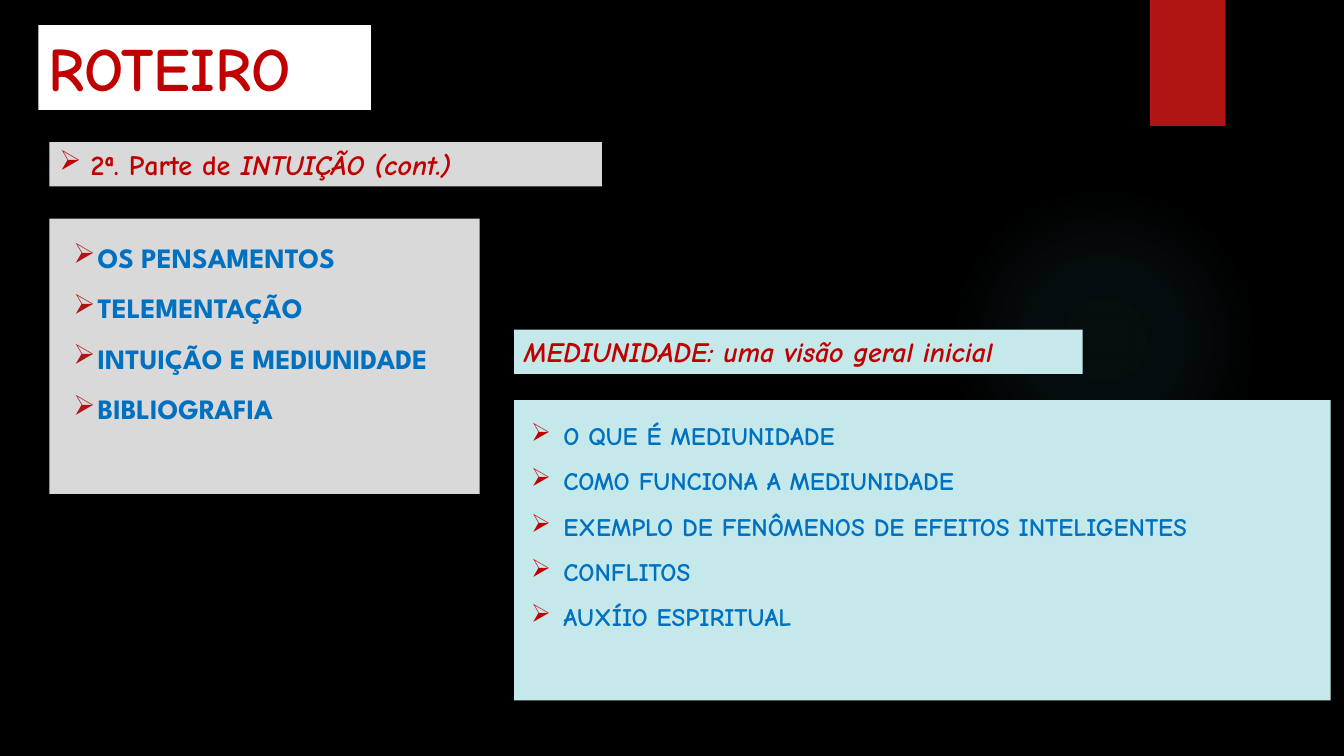
from lxml import etree
from pptx import Presentation
from pptx.dml.color import RGBColor
from pptx.enum.shapes import MSO_SHAPE
from pptx.enum.text import MSO_ANCHOR, PP_ALIGN
from pptx.oxml.ns import qn
from pptx.util import Inches, Pt

RECT, OVAL = MSO_SHAPE.RECTANGLE, MSO_SHAPE.OVAL
TOP, LEFT = MSO_ANCHOR.TOP, PP_ALIGN.LEFT

BLACK = RGBColor(0x00, 0x00, 0x00)
WHITE = RGBColor(0xFF, 0xFF, 0xFF)
GRAY = RGBColor(0xD9, 0xD9, 0xD9)
AQUA = RGBColor(0xC5, 0xE8, 0xEA)
TEAL = RGBColor(0x50, 0xB9, 0xC1)
RED = RGBColor(0xC0, 0x00, 0x00)
RIBBON = RGBColor(0xB0, 0x15, 0x13)
BLUE = RGBColor(0x00, 0x70, 0xC0)

HAND, SANS = "Comic Neue", "League Spartan"
HEADING = {"name": HAND, "size": Pt(20), "bold": True}
ARROW = "➢"

TOPICS = ["OS PENSAMENTOS", "TELEMENTAÇÃO", "INTUIÇÃO E MEDIUNIDADE", "BIBLIOGRAFIA"]
MEDIUMSHIP = [
    "O QUE É MEDIUNIDADE",
    "COMO FUNCIONA A MEDIUNIDADE",
    "EXEMPLO DE FENÔMENOS DE EFEITOS INTELIGENTES",
    "CONFLITOS",
    "AUXÍIO ESPIRITUAL",
]


class Deck:
    def __init__(self):
        self.prs = Presentation()
        self.prs.slide_width, self.prs.slide_height = Inches(13.333), Inches(7.5)
        self.s = self.prs.slides.add_slide(self.prs.slide_layouts[6])
        fill = self.s.background.fill
        fill.solid()
        fill.fore_color.rgb = BLACK

    def shape(self, kind, box, color):
        w, h = self.prs.slide_width, self.prs.slide_height
        sizes = [int(share * side / 100) for share, side in zip(box, (w, h, w, h))]
        sp = self.s.shapes.add_shape(kind, *sizes)
        sp.shadow.inherit = False
        sp.line.fill.background()
        sp.fill.solid()
        sp.fill.fore_color.rgb = color
        return sp

    def glow(self, box, color, stops):
        sp = self.shape(OVAL, box, color)
        solid = sp.fill._xPr.find(qn("a:solidFill"))
        grad = etree.Element(qn("a:gradFill"), rotWithShape="1")
        gs_list = etree.SubElement(grad, qn("a:gsLst"))
        for place, alpha in stops:
            gs = etree.SubElement(gs_list, qn("a:gs"), pos=str(place * 1000))
            clr = etree.SubElement(gs, qn("a:srgbClr"), val=str(color))
            etree.SubElement(clr, qn("a:alpha"), val=str(alpha * 1000))
        way = etree.SubElement(grad, qn("a:path"), {"path": "circle"})
        etree.SubElement(way, qn("a:fillToRect"), dict.fromkeys("ltrb", "50000"))
        solid.getparent().replace(solid, grad)

    def bullet(self, p, color, margin, hang):
        pPr = p._p.get_or_add_pPr()
        pPr.set("marL", str(Inches(margin)))
        pPr.set("indent", str(-Inches(hang)))
        bu = etree.SubElement(pPr, qn("a:buClr"))
        etree.SubElement(bu, qn("a:srgbClr"), val=str(color))
        etree.SubElement(pPr, qn("a:buChar"), char=ARROW)

    def panel(self, box, fill, paragraphs, font, color, bullet=None, spacing=1.0):
        tf = self.shape(RECT, box, fill).text_frame
        tf.word_wrap, tf.vertical_anchor = True, TOP
        for i, runs in enumerate(paragraphs):
            p = tf.add_paragraph() if i else tf.paragraphs[0]
            p.alignment, p.line_spacing = LEFT, spacing
            if bullet:
                self.bullet(p, *bullet)
            for text, extra in runs:
                r = p.add_run()
                r.text = text
                for key, value in {**font, **extra}.items():
                    setattr(r.font, key, value)
                r.font.color.rgb = color

    def bullets(self, box, fill, items, font, bullet):
        self.panel(box, fill, [[(item, {})] for item in items], font, BLUE, bullet, 1.5)


def main():
    deck = Deck()
    deck.glow((70.58, 24.4, 23.1, 41.07), TEAL, [(0, 7), (36, 6), (69, 0), (100, 0)])
    deck.shape(RECT, (85.58, 0, 5.62, 16.67), RIBBON)
    deck.panel((2.85, 3.33, 24.75, 11.2), WHITE, [[("ROTEIRO", {})]],
               {**HEADING, "size": Pt(44)}, RED)
    deck.panel((3.68, 18.8, 41.1, 5.87), GRAY,
               [[("2ª. Parte de ", {}), ("INTUIÇÃO (cont.)", {"italic": True})]],
               HEADING, RED, (RED, 0.31, 0.31))
    deck.bullets((3.68, 28.93, 32.02, 36.4), GRAY, TOPICS,
                 {**HEADING, "name": SANS}, (RIBBON, 0.38, 0.24))
    deck.panel((38.25, 43.6, 42.3, 5.87), AQUA,
               [[("MEDIUNIDADE: uma visão geral inicial", {"italic": True})]], HEADING, RED)
    deck.bullets((38.25, 52.93, 60.75, 39.73), AQUA, MEDIUMSHIP,
                 {**HEADING, "size": Pt(18)}, (RED, 0.39, 0.32))
    deck.prs.save("out.pptx")


if __name__ == "__main__":
    main()
